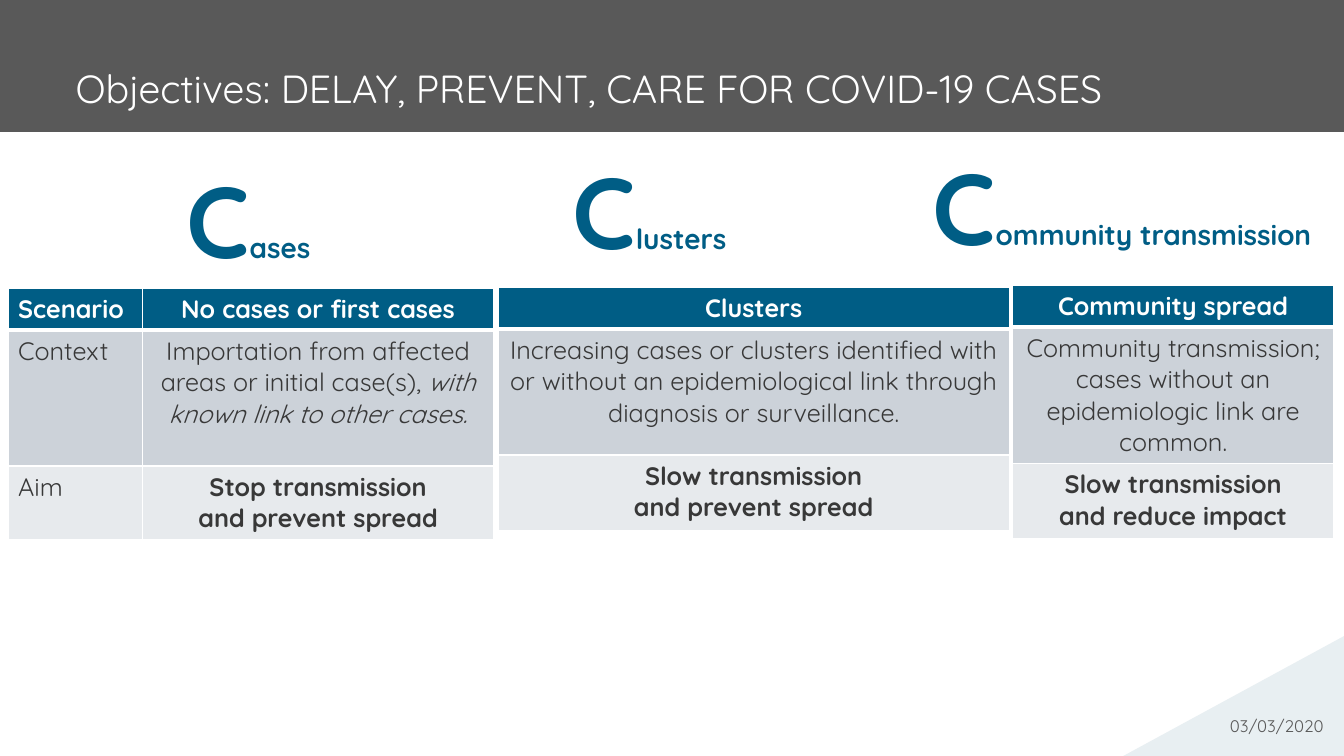
from lxml.etree import SubElement
from pptx import Presentation
from pptx.dml.color import RGBColor
from pptx.enum.text import MSO_ANCHOR as Anchor, MSO_AUTO_SIZE as AutoSize, PP_ALIGN as Align
from pptx.oxml.ns import qn
from pptx.util import Inches, Pt

BLUE, GREY, INK, WHITE = "005D85", "595959", "383838", "FFFFFF"
ROW_FILLS = [BLUE, "CCD2D9", "E7EAED"]
color = RGBColor.from_string


def add_run(paragraph, text, size, ink, bold=False, italic=False):
    run = paragraph.add_run()
    run.text = text
    font = run.font
    font.name, font.size, font.bold, font.italic = "Quicksand", Pt(size), bold, italic
    font.color.rgb = color(ink)


def add_border(cell, side, points):
    """Draw a white line on one side (L, R, T or B) of a table cell."""
    line = SubElement(cell._tc.get_or_add_tcPr(), qn(f"a:ln{side}"), w=str(Pt(points)))
    SubElement(SubElement(line, qn("a:solidFill")), qn("a:srgbClr"), val=WHITE)


deck = Presentation()
deck.slide_width, deck.slide_height = Inches(13.33), Inches(7.5)
slide = deck.slides.add_slide(deck.slide_layouts[5])
shapes = slide.shapes

# Title band
title = shapes.title
title.left, title.top, title.width, title.height = 0, 0, deck.slide_width, Inches(1.31)
title.fill.solid()
title.fill.fore_color.rgb = color(GREY)
heading = title.text_frame
heading.auto_size = AutoSize.NONE
heading.word_wrap = True
heading.vertical_anchor = Anchor.MIDDLE
heading.margin_left = heading.margin_right = Inches(0.75)
heading.margin_top, heading.margin_bottom = Inches(0.63), Inches(0.2)
heading.paragraphs[0].alignment = Align.LEFT
add_run(heading.paragraphs[0], "Objectives: DELAY, PREVENT, CARE FOR COVID-19 CASES", 28, WHITE)

# Dated corner
outline = shapes.build_freeform(Inches(11.14), Inches(7.5))
outline.add_line_segments([(Inches(13.33), Inches(6.31)), (Inches(13.33), Inches(7.5))])
corner = outline.convert_to_shape()
corner.shadow.inherit = False
corner.fill.solid()
corner.fill.fore_color.rgb = color("E8EFF2")
corner.line.fill.background()
date = corner.text_frame
date.vertical_anchor = Anchor.BOTTOM
date.margin_left = date.margin_top = 0
date.margin_right = date.margin_bottom = Inches(0.2)
date.paragraphs[0].alignment = Align.RIGHT
add_run(date.paragraphs[0], "03/03/2020", 12, GREY)

# Scenario tables: left, top, column widths, row heights, rows of cells.
# A cell is a list of paragraphs, and a paragraph a list of runs;
# every second run of a paragraph is italic.
scenarios = [
    (0.08, 2.86, [1.33, 3.49], [0.41, 1.35, 0.73], [
        [[["Scenario"]], [["No cases or first cases"]]],
        [[["Context"]], [["Importation from affected areas or initial case(s), ",
                          "with known link to other cases."]]],
        [[["Aim"]], [["Stop transmission"], ["and prevent spread"]]],
    ]),
    (4.94, 2.85, [5.07], [0.38, 1.25, 0.75], [
        [[["Clusters"]]],
        [[["Increasing cases or clusters identified with or without an "
           "epidemiological link through diagnosis or surveillance."]]],
        [[["Slow transmission"], ["and prevent spread"]]],
    ]),
    (10.04, 2.83, [3.19], [0.38, 1.25, 0.75], [
        [[["Community spread"]]],
        [[["Community transmission; cases without an epidemiologic link are common."]]],
        [[["Slow transmission"], ["and reduce impact"]]],
    ]),
]
for left, top, widths, heights, rows in scenarios:
    table = shapes.add_table(len(rows), len(widths), Inches(left), Inches(top),
                             Inches(sum(widths)), Inches(sum(heights))).table
    for column, width in zip(table.columns, widths):
        column.width = Inches(width)
    for r, (height, row) in enumerate(zip(heights, rows)):
        table.rows[r].height = Inches(height)
        for c, paragraphs in enumerate(row):
            cell = table.cell(r, c)
            is_label = len(widths) > 1 and c == 0
            for side in "LRTB":
                under_header = (r, side) in [(0, "B"), (1, "T")]
                add_border(cell, side, 3 if under_header else 1)
            cell.fill.solid()
            cell.fill.fore_color.rgb = color(ROW_FILLS[r])
            for p, runs in enumerate(paragraphs):
                frame = cell.text_frame
                paragraph = frame.add_paragraph() if p else frame.paragraphs[0]
                paragraph.alignment = Align.LEFT if is_label else Align.CENTER
                for i, text in enumerate(runs):
                    add_run(paragraph, text, 18, INK if r else WHITE,
                            bold=r == 0 or (r == 2 and not is_label), italic=i % 2 == 1)

# The three Cs above the tables
for left, top, width, ending in [(1.75, 1.52, 3.35, "ases"),
                                 (5.58, 1.43, 3.35, "lusters"),
                                 (9.15, 1.39, 4.38, "ommunity transmission")]:
    word = shapes.add_textbox(Inches(left), Inches(top), Inches(width), Inches(1.31)).text_frame
    word.word_wrap = True
    word.auto_size = AutoSize.SHAPE_TO_FIT_TEXT
    add_run(word.paragraphs[0], "C", 72, BLUE, bold=True)
    add_run(word.paragraphs[0], ending, 20, BLUE, bold=True)

deck.save("out.pptx")
